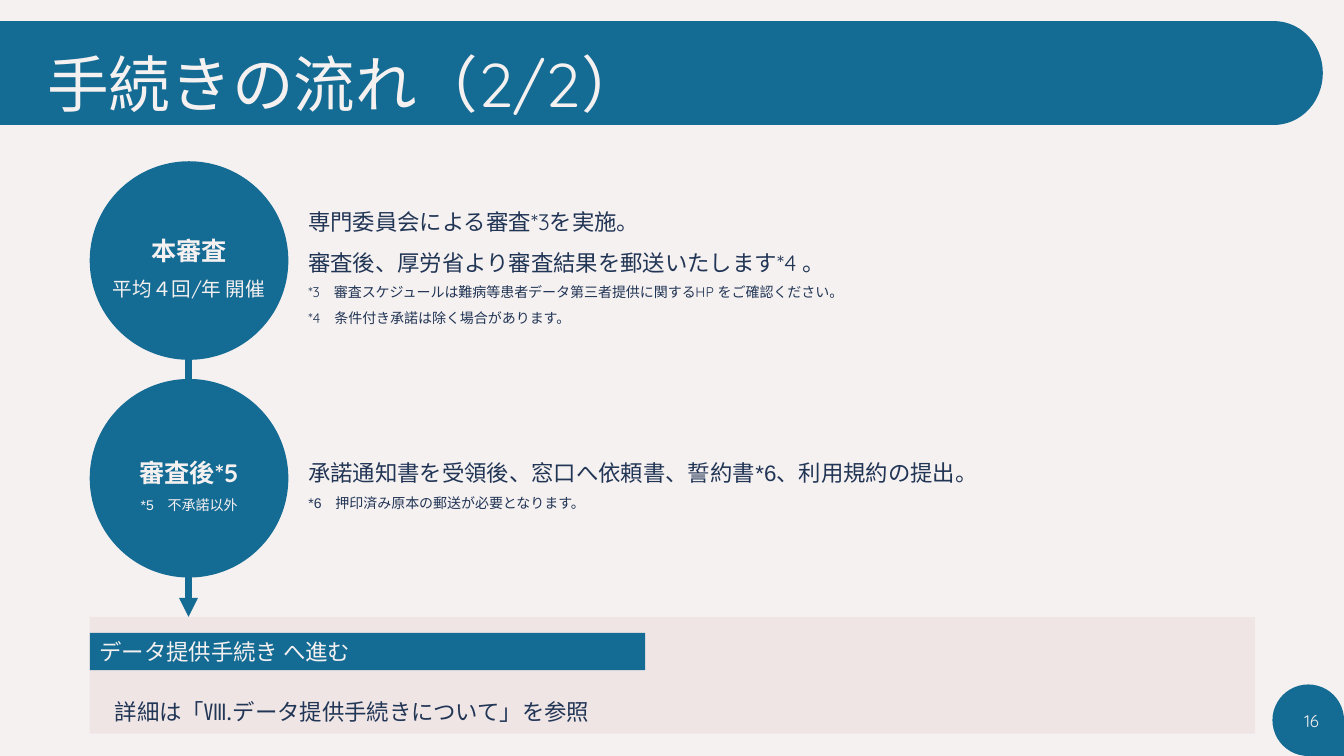
from dataclasses import dataclass

from lxml import etree
from pptx import Presentation
from pptx.dml.color import RGBColor
from pptx.enum.shapes import MSO_CONNECTOR, MSO_SHAPE as Preset
from pptx.enum.text import MSO_ANCHOR as Anchor, PP_ALIGN as Align
from pptx.oxml import parse_xml
from pptx.oxml.ns import nsdecls, qn
from pptx.shapes.autoshape import Shape
from pptx.util import Emu, Pt

PX = 9144  # 100 px to the inch
COLORS = {"paper": "F6F1F1", "teal": "146C94", "navy": "213555", "blush": "EFE5E5"}
QUICKSAND, ARIAL, NOTO = "Quicksand", "Arial", "Noto Sans CJK JP"

Box = tuple[int, int, int, int]


@dataclass(frozen=True)
class Line:
    text: str
    size: int
    font: str = QUICKSAND
    bold: bool = False


@dataclass(frozen=True)
class TextBlock:
    box: Box
    lines: list[Line]
    color: str = "navy"
    align: Align = Align.LEFT
    anchor: Anchor = Anchor.MIDDLE
    spacing: float = 1.5


@dataclass(frozen=True)
class Step:
    top: int
    label: list[Line]
    details: list[Line]


CIRCLE_LEFT, CIRCLE_SIZE, LABEL_HEIGHT = 89, 197, 84
STEPS = [
    Step(
        160,
        [Line("本審査", 18, bold=True), Line("平均４回/年 開催", 14)],
        [
            Line("専門委員会による審査*3を実施。", 16),
            Line("審査後、厚労省より審査結果を郵送いたします*4 。", 16),
            Line("*3　審査スケジュールは難病等患者データ第三者提供に関するHP をご確認ください。", 10),
            Line("*4　条件付き承諾は除く場合があります。", 10),
        ],
    ),
    Step(
        376,
        [Line("審査後*5", 18, bold=True), Line("*5　不承諾以外", 10, ARIAL)],
        [
            Line("承諾通知書を受領後、窓口へ依頼書、誓約書*6、利用規約の提出。", 16, ARIAL),
            Line("*6　押印済み原本の郵送が必要となります。", 10, ARIAL),
        ],
    ),
]

deck = Presentation()
deck.slide_width, deck.slide_height = Emu(1333 * PX), Emu(750 * PX)
slide = deck.slides.add_slide(deck.slide_layouts[6])


def rgb(name: str) -> RGBColor:
    return RGBColor.from_string(COLORS[name])


def scaled(box: Box) -> list[Emu]:
    return [Emu(length * PX) for length in box]


def add_filled(preset: Preset, box: Box, color: str) -> Shape:
    shape = slide.shapes.add_shape(preset, *scaled(box))
    shape.shadow.inherit = False
    shape.fill.solid()
    shape.fill.fore_color.rgb = rgb(color)
    shape.line.fill.background()
    return shape


def write(shape: Shape, block: TextBlock) -> None:
    frame = shape.text_frame
    frame.word_wrap = True
    frame.vertical_anchor = block.anchor
    for index, line in enumerate(block.lines):
        paragraph = frame.add_paragraph() if index else frame.paragraphs[0]
        paragraph.alignment = block.align
        paragraph.line_spacing = block.spacing
        run = paragraph.add_run()
        run.text = line.text
        run.font.name = line.font
        run.font.size = Pt(line.size)
        run.font.bold = line.bold
        run.font.color.rgb = rgb(block.color)
        east_asian = etree.Element(qn("a:ea"), typeface=NOTO)
        run.font._element.find(qn("a:latin")).addnext(east_asian)


def add_text(block: TextBlock) -> None:
    write(slide.shapes.add_textbox(*scaled(block.box)), block)


def add_flow_arrow(x: int, top: int, bottom: int) -> None:
    arrow = slide.shapes.add_connector(MSO_CONNECTOR.STRAIGHT, *scaled((x, top, x, bottom)))
    arrow.line.color.rgb = rgb("teal")
    arrow.line.width = Pt(4.5)
    arrow.line._get_or_add_ln().append(parse_xml(f'<a:tailEnd {nsdecls("a")} type="triangle"/>'))
    arrow._element.spPr.append(parse_xml(f'<a:effectLst {nsdecls("a")}/>'))


def add_step(step: Step) -> None:
    label_top = step.top + (CIRCLE_SIZE - LABEL_HEIGHT) // 2
    add_filled(Preset.FLOWCHART_CONNECTOR, (CIRCLE_LEFT, step.top, CIRCLE_SIZE, CIRCLE_SIZE), "teal")
    add_text(TextBlock((296, step.top, 1002, CIRCLE_SIZE), step.details))
    add_text(TextBlock((CIRCLE_LEFT, label_top, CIRCLE_SIZE, LABEL_HEIGHT),
                       step.label, "paper", Align.CENTER))


def main() -> None:
    slide.background.fill.solid()
    slide.background.fill.fore_color.rgb = rgb("paper")

    page_corner = add_filled(Preset.TEAR, (1262, 679, 71, 71), "teal")
    page_corner.rotation = 90
    add_filled(Preset.FLOWCHART_CONNECTOR, (1215, 21, 97, 103), "teal")
    add_filled(Preset.RECTANGLE, (0, 21, 1262, 103), "teal")
    add_text(TextBlock((37, 22, 1150, 103), [Line("手続きの流れ（2/2）", 44)],
                       "paper", anchor=Anchor.BOTTOM, spacing=0.9))

    add_flow_arrow(187, 239, 612)
    for step in STEPS:
        add_step(step)

    add_filled(Preset.RECTANGLE, (CIRCLE_LEFT, 612, 1156, 116), "blush")
    heading = TextBlock((CIRCLE_LEFT, 628, 551, 37), [Line("データ提供手続き へ進む", 16, ARIAL)],
                        "paper", anchor=Anchor.BOTTOM, spacing=1.0)
    write(add_filled(Preset.RECTANGLE, heading.box, "teal"), heading)
    add_text(TextBlock((104, 674, 1122, 44),
                       [Line("詳細は「Ⅷ.データ提供手続きについて」を参照", 16, NOTO)],
                       anchor=Anchor.TOP))
    add_text(TextBlock((1268, 695, 50, 40), [Line("16", 12)], "paper", Align.RIGHT, spacing=1.0))

    deck.save("out.pptx")


if __name__ == "__main__":
    main()
